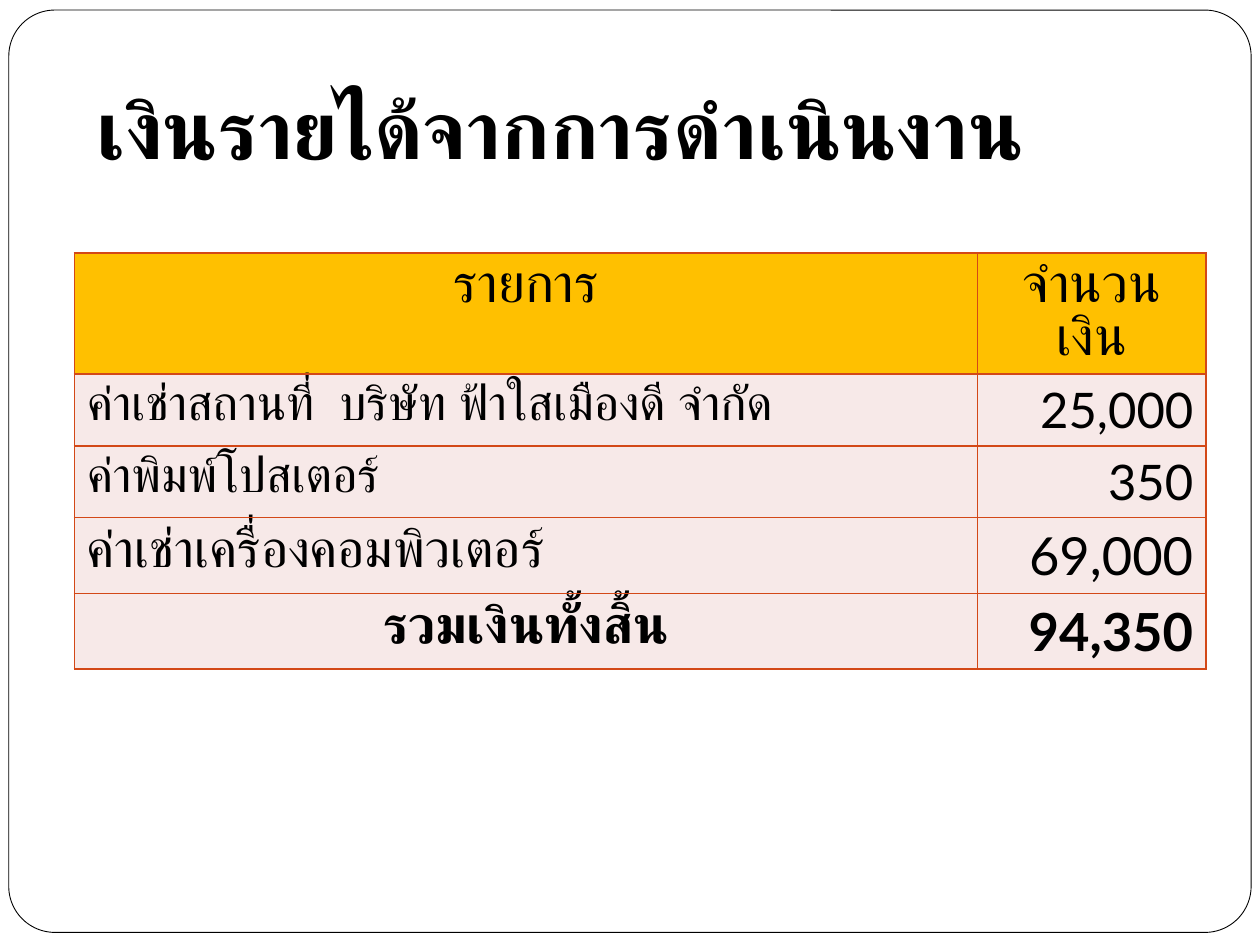
from pptx import Presentation
from pptx.dml.color import RGBColor
from pptx.enum.shapes import MSO_SHAPE
from pptx.enum.text import MSO_ANCHOR, PP_ALIGN
from pptx.oxml.ns import qn
from pptx.util import Inches, Pt
from lxml.etree import SubElement

FONT = "Lato"
BLACK, WHITE, GOLD, PINK, RUST = "000000", "FFFFFF", "FFC000", "F7E9E8", "D34817"
TITLE = "เงินรายได้จากการดำเนินงาน"
MID, JUST, RIGHT = PP_ALIGN.CENTER, PP_ALIGN.JUSTIFY, PP_ALIGN.RIGHT
COLS = [7.17, 1.81]
HEAD, ITEM, COST = (0.82, 0.82), (0.86, 1), (JUST, RIGHT)
ROWS = [
    ("รายการ", "จำนวนเงิน", 31, 0.96, GOLD, (MID, MID), HEAD, False),
    ("ค่าเช่าสถานที่  บริษัท ฟ้าใสเมืองดี จำกัด", "25,000", 28, 0.57, PINK, COST, ITEM, False),
    ("ค่าพิมพ์โปสเตอร์", "350", 28, 0.57, PINK, COST, ITEM, False),
    ("ค่าเช่าเครื่องคอมพิวเตอร์", "69,000", 30, 0.6, PINK, COST, ITEM, False),
    ("รวมเงินทั้งสิ้น", "94,350", 30, 0.6, PINK, (MID, RIGHT), ITEM, True),
]


def color(code):
    return RGBColor.from_string(code)


def write(frame, text, size, bold, align, pitch=1):
    para = frame.paragraphs[0]
    para.alignment = align
    para.line_spacing = float(pitch)
    run = para.add_run()
    run.text = text
    font = run.font
    font.name, font.size, font.bold = FONT, Pt(size), bold
    font.color.rgb = color(BLACK)
    SubElement(run._r.get_or_add_rPr(), qn("a:cs"), typeface=FONT)


def border(cell):
    props = cell._tc.get_or_add_tcPr()
    for spot, side in enumerate(("lnL", "lnR", "lnT", "lnB")):
        line = props.makeelement(qn("a:" + side), {"w": str(Pt(1))})
        fill = SubElement(line, qn("a:solidFill"))
        SubElement(fill, qn("a:srgbClr"), val=RUST)
        props.insert(spot, line)


def add_frame(slide):
    box = slide.shapes.add_shape(
        MSO_SHAPE.ROUNDED_RECTANGLE, Inches(0.07), Inches(0.08), Inches(9.86), Inches(7.32))
    box.adjustments[0] = 0.05
    box.shadow.inherit = False
    box.fill.solid()
    box.fill.fore_color.rgb = color(WHITE)
    box.line.color.rgb = color(BLACK)
    box.line.width = Pt(0.5)


def add_title(slide):
    box = slide.shapes.add_textbox(Inches(0.67), Inches(0.34), Inches(8.58), Inches(1.16))
    frame = box.text_frame
    frame.word_wrap = True
    frame.vertical_anchor = MSO_ANCHOR.BOTTOM
    frame.margin_bottom = Inches(0.1)
    write(frame, TITLE, 47, True, PP_ALIGN.LEFT)


def add_grid(slide):
    high = sum(row[3] for row in ROWS)
    table = slide.shapes.add_table(
        len(ROWS), len(COLS), Inches(0.59), Inches(2.01), Inches(sum(COLS)), Inches(high)).table
    for col, wide in zip(table.columns, COLS):
        col.width = Inches(wide)
    for line, (item, cost, size, tall, fill, aligns, gaps, bold) in zip(table.rows, ROWS):
        line.height = Inches(tall)
        for cell, text, align, pitch in zip(line.cells, (item, cost), aligns, gaps):
            cell.fill.solid()
            cell.fill.fore_color.rgb = color(fill)
            border(cell)
            write(cell.text_frame, text, size, bold, align, pitch)


def main():
    deck = Presentation()
    deck.slide_width, deck.slide_height = Inches(10), Inches(7.5)
    slide = deck.slides.add_slide(deck.slide_layouts[6])
    add_frame(slide)
    add_title(slide)
    add_grid(slide)
    deck.save("out.pptx")


if __name__ == "__main__":
    main()
